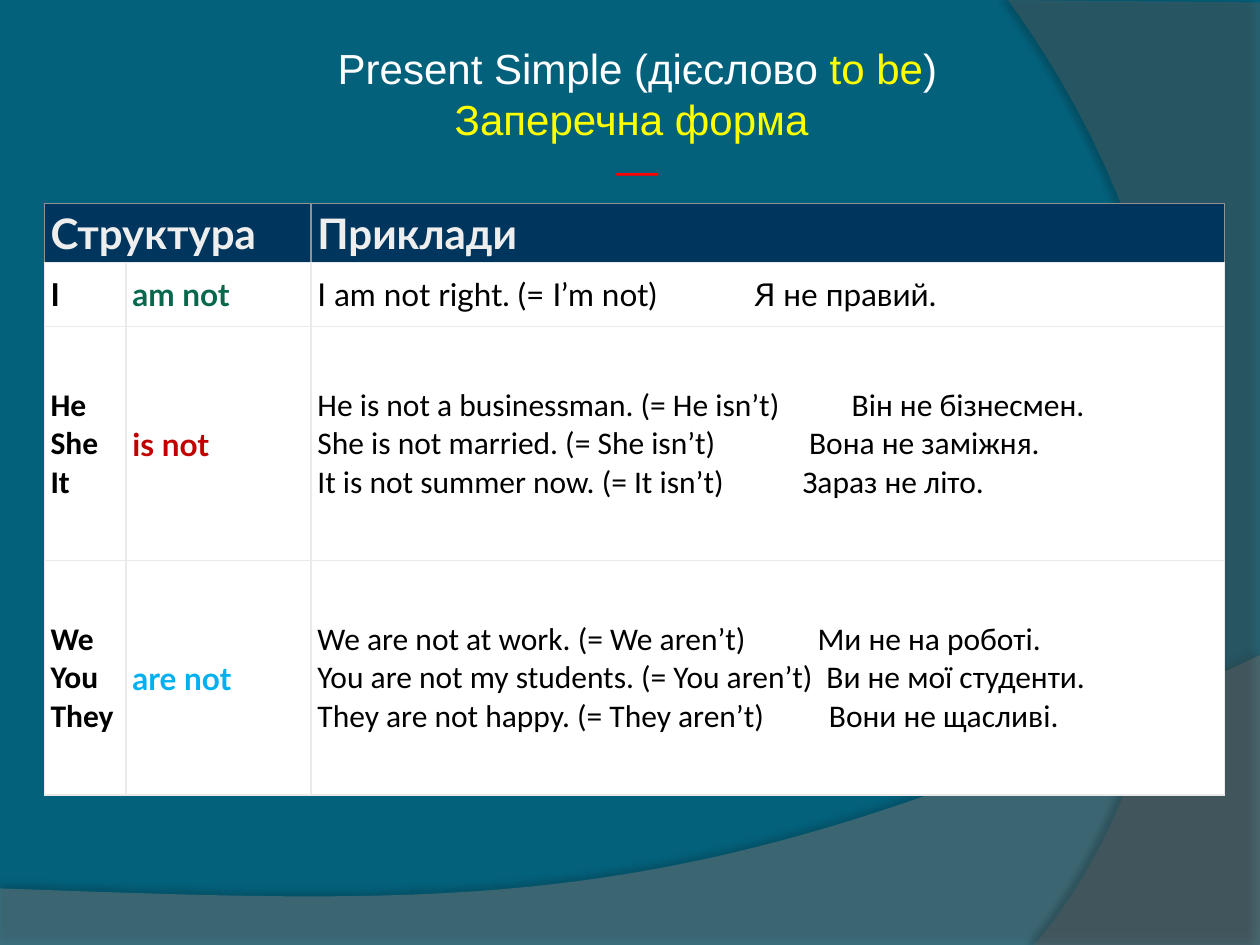
from dataclasses import dataclass

import lxml.etree
import pptx
import pptx.dml.color
import pptx.enum.text
import pptx.oxml.ns
import pptx.util

Cm, Pt = pptx.util.Cm, pptx.util.Pt
qn = pptx.oxml.ns.qn


@dataclass(frozen=True)
class Theme:
    background: str = "04617B"
    white: str = "FFFFFF"
    yellow: str = "FFFF00"
    red: str = "FF0000"
    black: str = "000000"
    header_fill: str = "00365E"
    header_text: str = "EEEEEE"
    header_line: str = "919191"
    grid_line: str = "EAEAEA"
    title_font: str = "Arial"
    table_font: str = "Lato"
    list_font: str = "Calibri"
    large: int = 24
    body: int = 18
    line: float = 0.75


THEME = Theme()


@dataclass(frozen=True)
class Wave:
    """Straight corners, then one cubic curve back to the first corner (cm)."""
    corners: tuple
    controls: tuple
    color: str
    opacity: int
    shadow_opacity: int
    shadow_distance: float
    shadow_angle: int


@dataclass(frozen=True)
class Example:
    english: str
    ukrainian: str
    tab: float


@dataclass(frozen=True)
class VerbRow:
    pronouns: tuple
    verb: str
    verb_color: str
    list_font: str
    examples: tuple


WAVES = (
    Wave(((0, 17.91), (0, 19.05), (25.4, 19.05), (25.4, 13.21)),
         ((14.2, 18.52), (9.93, 18.26)), "7F7F7F", 45, 35, 3.5, 270),
    Wave(((20.32, 0), (25.4, 0.05), (25.4, 19.05), (20.85, 19.05)),
         ((23.75, 15.72), (25.86, 7.62)), "5E5E5E", 40, 45, 4, 180),
)

VERB_ROWS = (
    VerbRow(("I",), "am not", "08684E", THEME.table_font, (
        Example("I am not right. (= I’m not)", "Я не правий.", 8.81),)),
    VerbRow(("He", "She", "It"), "is not", "C00000", THEME.list_font, (
        Example("He is not a businessman. (= He isn’t)", "Він не бізнесмен.", 10.77),
        Example("She is not married. (= She isn’t)", "Вона не заміжня.", 9.91),
        Example("It is not summer now. (= It isn’t)", "Зараз не літо.", 9.78))),
    VerbRow(("We", "You", "They"), "are not", "00B0F0", THEME.list_font, (
        Example("We are not at work. (= We aren’t)", "Ми не на роботі.", 10.08),
        Example("You are not my students. (= You aren’t)", "Ви не мої студенти.", 10.26),
        Example("They are not happy. (= They aren’t)", "Вони не щасливі.", 10.31))),
)

COLUMNS = (1.65, 3.73, 18.42)
ROWS = (1.17, 1.3, 4.72, 4.72)


def rgb(color: str) -> pptx.dml.color.RGBColor:
    return pptx.dml.color.RGBColor.from_string(color)


def sub(parent, tag: str, **attributes):
    return lxml.etree.SubElement(
        parent, qn(tag), {key: str(value) for key, value in attributes.items()})


def style_run(r, font: str, size: int, color: str, bold: bool = False) -> None:
    r.font.name, r.font.size, r.font.bold = font, Pt(size), bold
    r.font.color.rgb = rgb(color)


def bezier(p0, p1, p2, p3, steps: int = 60) -> list:
    points = []
    for i in range(1, steps + 1):
        t = i / steps
        weights = ((1 - t) ** 3, 3 * t * (1 - t) ** 2, 3 * t * t * (1 - t), t ** 3)
        points.append(tuple(
            sum(w * p[axis] for w, p in zip(weights, (p0, p1, p2, p3)))
            for axis in (0, 1)))
    return points


def draw_wave(s, wave: Wave) -> None:
    start, end = wave.corners[0], wave.corners[-1]
    points = list(wave.corners[1:]) + bezier(end, *wave.controls, start)
    builder = s.shapes.build_freeform(Cm(start[0]), Cm(start[1]))
    builder.add_line_segments([(Cm(x), Cm(y)) for x, y in points], close=True)
    sp = builder.convert_to_shape()
    sp.fill.solid()
    sp.fill.fore_color.rgb = rgb(wave.color)
    sp.line.fill.background()
    sp.shadow.inherit = False
    sp_pr = sp.fill._xPr
    sub(sp_pr.find(qn("a:solidFill"))[0], "a:alpha", val=wave.opacity * 1000)
    shadow = sub(sp_pr.find(qn("a:effectLst")), "a:outerShdw", blurRad=Pt(4),
                 dist=Pt(wave.shadow_distance), dir=wave.shadow_angle * 60000,
                 algn="ctr", rotWithShape=0)
    sub(sub(shadow, "a:srgbClr", val=THEME.black), "a:alpha",
        val=wave.shadow_opacity * 1000)


def draw_title(s) -> None:
    sp = s.shapes.add_textbox(Cm(6.5), Cm(0.74), Cm(12.7), Cm(3.33))
    tf = sp.text_frame
    tf.word_wrap = True
    p = tf.paragraphs[0]
    for text, color in (("Present Simple (дієслово ", THEME.white),
                        ("to be", THEME.yellow), (")", THEME.white)):
        r = p.add_run()
        r.text = text
        style_run(r, THEME.title_font, THEME.large, color)
    p = tf.add_paragraph()
    p.text = "Заперечна форма \v—"
    for r, color in zip(p.runs, (THEME.yellow, THEME.red)):
        style_run(r, THEME.title_font, THEME.large, color)
    for p in tf.paragraphs:
        p.alignment = pptx.enum.text.PP_ALIGN.CENTER


def format_cell(cell, fill: str, line: str) -> None:
    cell.vertical_anchor = pptx.enum.text.MSO_ANCHOR.MIDDLE
    cell.margin_left = cell.margin_right = Cm(0.13)
    cell.margin_top = cell.margin_bottom = Cm(0.08)
    tc_pr = cell._tc.get_or_add_tcPr()
    for side in "LRTB":
        color = THEME.grid_line if side == "B" else line
        ln = sub(tc_pr, f"a:ln{side}", w=Pt(THEME.line))
        sub(sub(ln, "a:solidFill"), "a:srgbClr", val=color)
    cell.fill.solid()
    cell.fill.fore_color.rgb = rgb(fill)


def write_cell(cell, lines, font: str, size: int, color: str, bold: bool) -> None:
    tf = cell.text_frame
    tf.text = "\n".join(lines)
    for p in tf.paragraphs:
        for r in p.runs:
            style_run(r, font, size, color, bold)


def draw_table(s) -> None:
    table = s.shapes.add_table(len(ROWS), len(COLUMNS), Cm(0.89), Cm(4.11),
                               Cm(sum(COLUMNS)), Cm(sum(ROWS))).table
    for column, width in zip(table.columns, COLUMNS):
        column.width = Cm(width)
    for i, (row, height) in enumerate(zip(table.rows, ROWS)):
        row.height = Cm(height)
        for cell in row.cells:
            if i == 0:
                format_cell(cell, THEME.header_fill, THEME.header_line)
            else:
                format_cell(cell, THEME.white, THEME.grid_line)
    table.cell(0, 0).merge(table.cell(0, 1))
    for column, text in ((0, "Структура"), (2, "Приклади")):
        write_cell(table.cell(0, column), (text,), THEME.table_font,
                   THEME.large, THEME.header_text, True)
    for i, row in enumerate(VERB_ROWS, start=1):
        pronouns, verb, examples = (table.cell(i, j) for j in range(3))
        write_cell(pronouns, row.pronouns, row.list_font, THEME.body, THEME.black, True)
        write_cell(verb, (row.verb,), THEME.table_font, THEME.body, row.verb_color, True)
        write_cell(examples, [f"{e.english}\t{e.ukrainian}" for e in row.examples],
                   row.list_font, THEME.body, THEME.black, False)
        for p, example in zip(examples.text_frame.paragraphs, row.examples):
            tabs = sub(p._p.get_or_add_pPr(), "a:tabLst")
            sub(tabs, "a:tab", pos=Cm(example.tab), algn="l")


def main() -> None:
    prs = pptx.Presentation()
    prs.slide_width, prs.slide_height = Cm(25.4), Cm(19.05)
    s = prs.slides.add_slide(prs.slide_layouts[6])
    s.background.fill.solid()
    s.background.fill.fore_color.rgb = rgb(THEME.background)
    for wave in WAVES:
        draw_wave(s, wave)
    draw_title(s)
    draw_table(s)
    prs.save("out.pptx")


if __name__ == "__main__":
    main()
